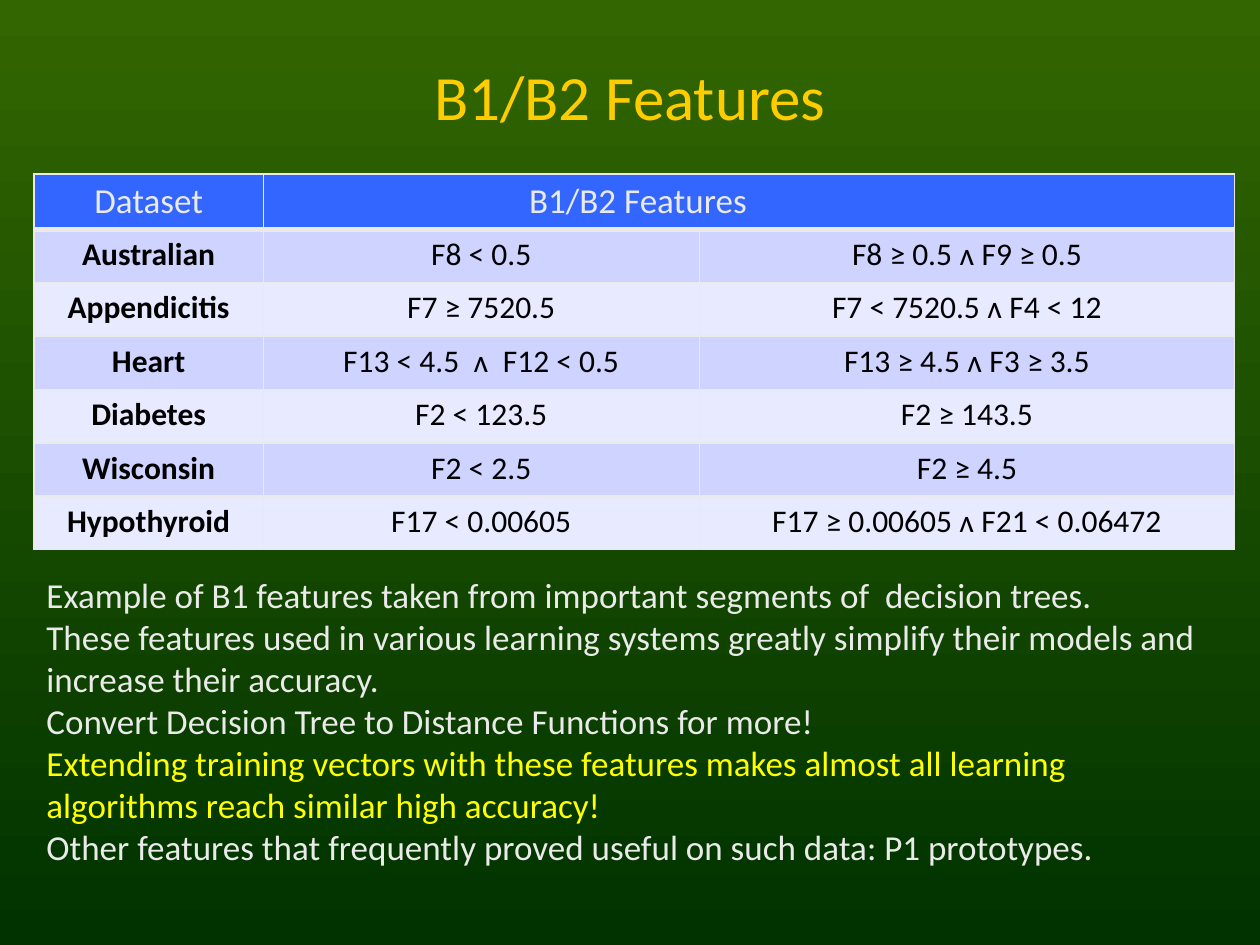
from lxml import etree
from pptx import Presentation
from pptx.dml.color import RGBColor
from pptx.enum.text import MSO_ANCHOR, PP_ALIGN
from pptx.oxml.ns import qn
from pptx.util import Inches, Pt

CENTER, LEFT = PP_ALIGN.CENTER, PP_ALIGN.LEFT
MIDDLE = MSO_ANCHOR.MIDDLE
W, H = Inches(10), Inches(7.5)
PALE, GOLD, YELLOW, BLACK = "EAEAEA", "FFCC00", "FFFF00", "000000"
HEADER_BLUE, BAND_DARK, BAND_LIGHT = "3366FF", "CED3FF", "E8EAFF"


def rgb(value):
    return RGBColor.from_string(value)


def add_run(paragraph, text, size, color, bold=False):
    run = paragraph.add_run()
    run.text = text
    run.font.name = "Calibri"
    run.font.size = Pt(size)
    run.font.bold = bold
    run.font.color.rgb = rgb(color)
    return run


prs = Presentation()
prs.slide_width, prs.slide_height = W, H
slide = prs.slides.add_slide(prs.slide_layouts[6])

# Background: green fading downwards
backdrop = slide.background.fill
backdrop.gradient()
backdrop.gradient_angle = 270
for stop, shade in zip(backdrop.gradient_stops, ("336600", "003300")):
    stop.color.rgb = rgb(shade)

# Title with a black text shadow
title = slide.shapes.add_textbox(int(W * 0.075), int(H * 0.037), int(W * 0.85), int(H * 0.127))
title.text_frame.word_wrap = True
title.text_frame.vertical_anchor = MIDDLE
heading = title.text_frame.paragraphs[0]
heading.alignment = CENTER
heading_run = add_run(heading, "B1/B2 Features", 36, GOLD)
effects = etree.Element(qn("a:effectLst"))
shadow = etree.SubElement(effects, qn("a:outerShdw"), dist="38100", dir="2700000")
etree.SubElement(shadow, qn("a:srgbClr"), val=BLACK)
heading_run.font.fill._xPr.find(qn("a:solidFill")).addnext(effects)

# Feature table
features = [
    ("Dataset", "B1/B2 Features", ""),
    ("Australian", "F8 < 0.5", "F8 ≥ 0.5 ᴧ F9 ≥ 0.5"),
    ("Appendicitis", "F7 ≥ 7520.5", "F7 < 7520.5 ᴧ F4 < 12"),
    ("Heart", "F13 < 4.5  ᴧ  F12 < 0.5", "F13 ≥ 4.5 ᴧ F3 ≥ 3.5"),
    ("Diabetes", "F2 < 123.5", "F2 ≥ 143.5"),
    ("Wisconsin", "F2 < 2.5", "F2 ≥ 4.5"),
    ("Hypothyroid", "F17 < 0.00605", "F17 ≥ 0.00605 ᴧ F21 < 0.06472"),
]
column_widths = [Inches(1.82), Inches(3.46), Inches(4.25)]
header_height, row_height = Inches(0.44), Inches(0.424)
table = slide.shapes.add_table(len(features), len(column_widths), int(W * 0.027), int(H * 0.184),
                               sum(column_widths), header_height + 6 * row_height).table
for column, width in zip(table.columns, column_widths):
    column.width = width

for r, row in enumerate(features):
    table.rows[r].height = row_height if r else header_height
    band = BAND_DARK if r % 2 else BAND_LIGHT
    for c, entry in enumerate(row):
        cell = table.cell(r, c)
        cell.vertical_anchor = MSO_ANCHOR.TOP
        # Borders go before the fill; the rule under the header is thicker
        for side in ("lnL", "lnR", "lnT", "lnB"):
            under_header = (r, side) in ((0, "lnB"), (1, "lnT"))
            border = etree.SubElement(cell._tc.get_or_add_tcPr(), qn("a:" + side),
                                      w=str(Pt(3 if under_header else 1)))
            line = etree.SubElement(border, qn("a:solidFill"))
            etree.SubElement(line, qn("a:srgbClr"), val=PALE)
        cell.fill.solid()
        cell.fill.fore_color.rgb = rgb(band if r else HEADER_BLUE)
        if entry:
            label = cell.text_frame.paragraphs[0]
            label.alignment = CENTER
            if r:
                add_run(label, entry, 18, BLACK, bold=c == 0)
            else:
                add_run(label, entry, 20, PALE)

# The spanning header is set off from the left
span = table.cell(0, 1)
span.merge(table.cell(0, 2))
span.margin_left = Inches(2.11)
span.text_frame.paragraphs[0].alignment = LEFT

# Remarks below the table
remarks = [
    (PALE, ["Example of B1 features taken from important segments of  decision trees."]),
    (PALE, ["These features used in various learning systems greatly simplify their models and "
            "increase their accuracy.",
            "Convert Decision Tree to Distance Functions for more!"]),
    (YELLOW, ["Extending training vectors with these features makes almost all learning "
              "algorithms reach similar high accuracy!"]),
    (PALE, ["Other features that frequently proved useful on such data: P1 prototypes."]),
]
notes_frame = slide.shapes.add_textbox(int(W * 0.027), int(H * 0.6), int(W * 0.941), int(H * 0.328)).text_frame
notes_frame.word_wrap = True
for i, (color, lines) in enumerate(remarks):
    remark = notes_frame.add_paragraph() if i else notes_frame.paragraphs[0]
    for j, text in enumerate(lines):
        if j:
            remark.add_line_break()
        add_run(remark, text, 20, color)

prs.save("out.pptx")
